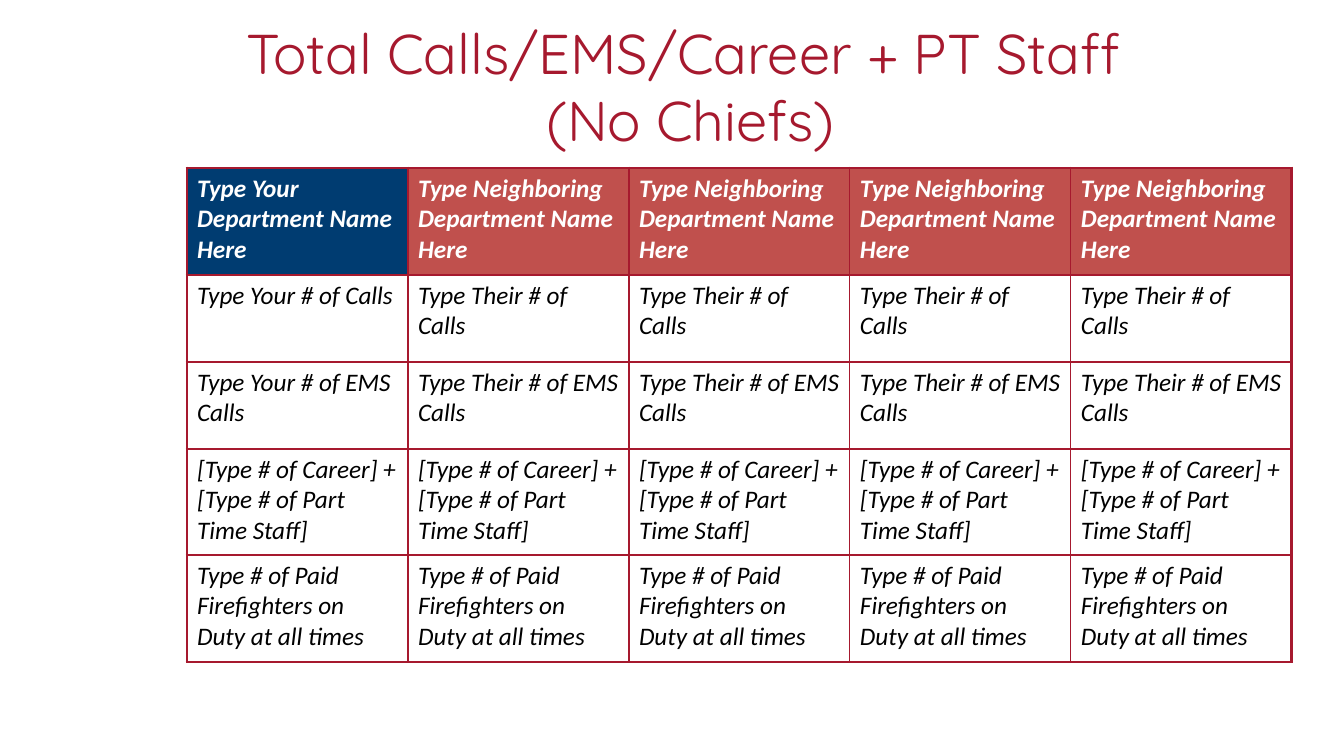
import pptx
import pptx.util
import pptx.dml.color
import pptx.enum.text
from lxml import etree

TITLE = "Total Calls/EMS/Career + PT Staff \v(No Chiefs)"
# Each row: own department, then every neighbor
ROWS = [
    ("Type Your Department Name Here", "Type Neighboring Department Name Here"),
    ("Type Your # of Calls", "Type Their # of Calls"),
    ("Type Your # of EMS Calls", "Type Their # of EMS Calls"),
    ("[Type # of Career] + [Type # of Part Time Staff]",) * 2,
    ("Type # of Paid Firefighters on Duty at all times",) * 2,
]
COLS = 5
HEIGHTS = [107, 87, 87, 106, 107]
COL_W = 221
LEFT, TOP = 187, 168
COLORS = {"red": "A6192E", "navy": "003C71", "brick": "C0504D",
          "white": "FFFFFF", "black": "000000"}
THIN, THICK = 1, 2.25


def px(n):
    return pptx.util.Emu(round(n * 914400 / 100.8))


def color(name):
    return pptx.dml.color.RGBColor.from_string(COLORS[name])


def border(cell, widths):
    """Draw red edges; widths are points for left, right, top, bottom."""
    props = cell._tc.get_or_add_tcPr()
    ns = "{http://schemas.openxmlformats.org/drawingml/2006/main}"
    for i, (side, width) in enumerate(zip("LRTB", widths)):
        line = etree.Element(ns + "ln" + side, w=str(pptx.util.Pt(width)))
        fill = etree.SubElement(line, ns + "solidFill")
        etree.SubElement(fill, ns + "srgbClr", val=COLORS["red"])
        props.insert(i, line)


def add_title(slide):
    box = slide.shapes.add_textbox(px(108), px(26), px(1165), px(120))
    frame = box.text_frame
    frame.word_wrap = True
    frame.vertical_anchor = pptx.enum.text.MSO_ANCHOR.MIDDLE
    frame.text = TITLE
    para = frame.paragraphs[0]
    para.alignment = pptx.enum.text.PP_ALIGN.CENTER
    para.font.name = "Quicksand"
    para.font.size = pptx.util.Pt(40)
    para.font.color.rgb = color("red")


def fill_cell(cell, row, col):
    head = row == 0
    cell.text = ROWS[row][min(col, 1)]
    font = cell.text_frame.paragraphs[0].font
    font.name = "Calibri"
    font.size = pptx.util.Pt(18)
    font.italic = True
    font.bold = head
    font.color.rgb = color("white" if head else "black")
    if head:
        cell.fill.solid()
        cell.fill.fore_color.rgb = color("brick" if col else "navy")
    else:
        cell.fill.background()
    outer = (col == 0, col == COLS - 1, head, row == len(ROWS) - 1)
    border(cell, [THICK if edge else THIN for edge in outer])


def add_grid(slide):
    table = slide.shapes.add_table(
        len(ROWS), COLS, px(LEFT), px(TOP),
        px(COL_W * COLS), px(sum(HEIGHTS))).table
    for col in table.columns:
        col.width = px(COL_W)
    for r, height in enumerate(HEIGHTS):
        table.rows[r].height = px(height)
        for c in range(COLS):
            fill_cell(table.cell(r, c), r, c)


def main():
    deck = pptx.Presentation()
    deck.slide_width, deck.slide_height = px(1344), px(756)
    slide = deck.slides.add_slide(deck.slide_layouts[6])
    add_title(slide)
    add_grid(slide)
    deck.save("out.pptx")


if __name__ == "__main__":
    main()
